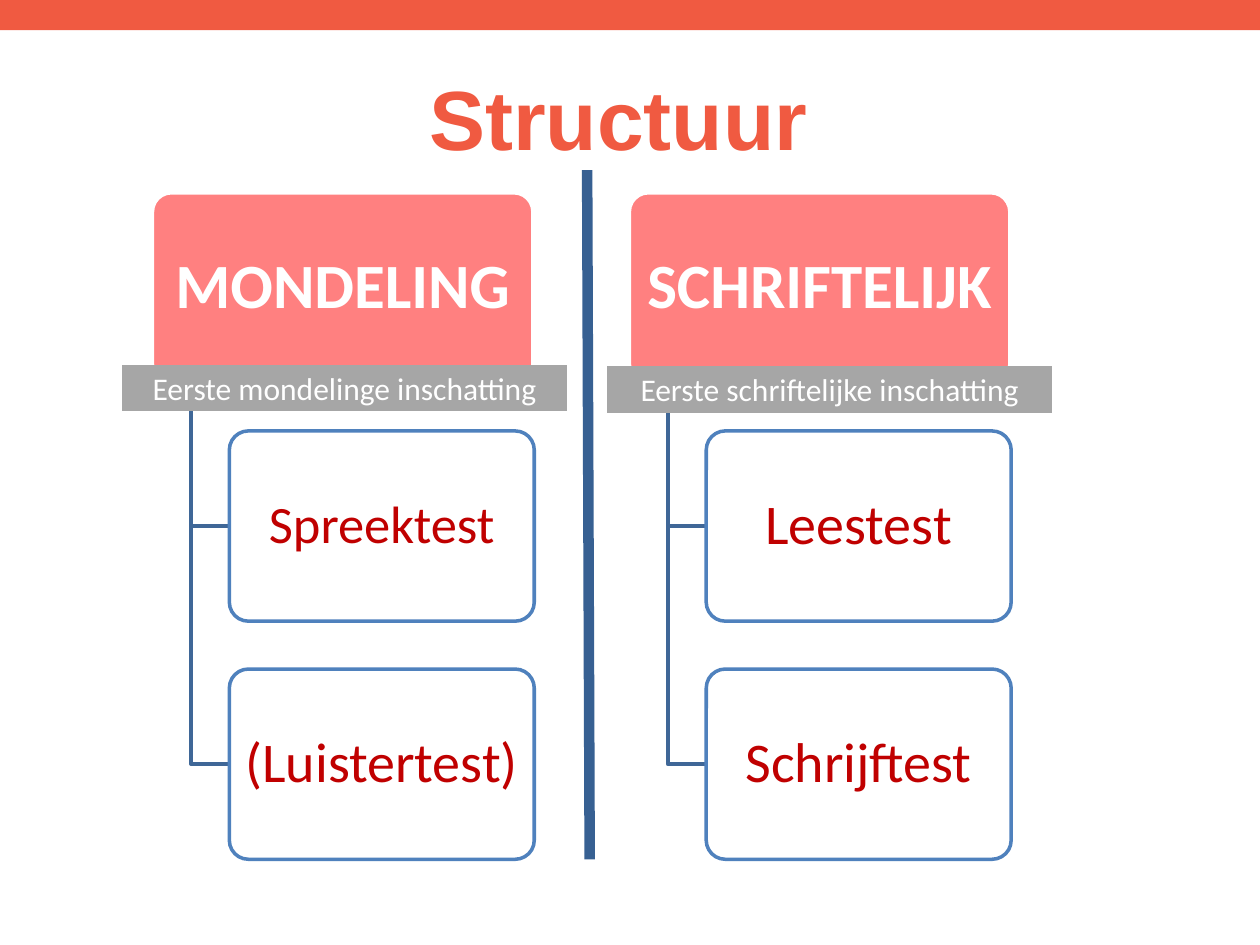
from lxml.etree import SubElement
from pptx import Presentation
from pptx.dml.color import RGBColor
from pptx.enum.shapes import MSO_CONNECTOR, MSO_SHAPE
from pptx.enum.text import MSO_ANCHOR, PP_ALIGN
from pptx.oxml.ns import qn
from pptx.util import Inches, Pt

ORANGE, PINK, RED, WHITE = "F05A41", "FF8080", "C00000", "FFFFFF"
GREY, BLUE, ELBOW_BLUE, DIVIDER_BLUE = "A6A6A6", "4F81BD", "3F6797", "376092"


def paint(shape, fill=None, line=None, width=2):
    """Set fill and outline from hex strings; None means no colour."""
    shape.shadow.inherit = False
    if fill:
        shape.fill.solid()
        shape.fill.fore_color.rgb = RGBColor.from_string(fill)
    else:
        shape.fill.background()
    if line:
        shape.line.color.rgb = RGBColor.from_string(line)
        shape.line.width = Pt(width)
    else:
        shape.line.fill.background()


def write(shape, text, size, color, font="Calibri", bold=False, spacing=1.0,
          inset_x=0.1, inset_y=0.05):
    """Put one centred paragraph in a shape."""
    frame = shape.text_frame
    frame.word_wrap = True
    frame.vertical_anchor = MSO_ANCHOR.MIDDLE
    frame.margin_left = frame.margin_right = Inches(inset_x)
    frame.margin_top = frame.margin_bottom = Inches(inset_y)
    paragraph = frame.paragraphs[0]
    paragraph.alignment = PP_ALIGN.CENTER
    paragraph.line_spacing = spacing
    run = paragraph.add_run()
    run.text = text
    run.font.name, run.font.size, run.font.bold = font, Pt(size), bold
    run.font.color.rgb = RGBColor.from_string(color)


presentation = Presentation()
presentation.slide_width, presentation.slide_height = Inches(10), Inches(7.5)
slide = presentation.slides.add_slide(presentation.slide_layouts[5])
shapes = slide.shapes

# Top band and title
band = shapes.add_shape(MSO_SHAPE.RECTANGLE, 0, 0, presentation.slide_width, Inches(0.24))
paint(band, ORANGE)
title = shapes.title
title.left, title.top, title.width, title.height = map(Inches, (0.5, 0.3, 9, 1.25))
write(title, "Structuur ", 48, ORANGE, font="Arial", bold=True)

# Grid of the two columns: a heading row and two test rows
LEFT, TOP = 1.21, 1.53
COLUMN_STEP, ROW_STEP = 3.785, 1.89
HEADING_WIDTH, CARD_WIDTH, CARD_HEIGHT = 3.02, 2.42, 1.51
INDENT = 0.61
columns = [
    ("MONDELING", [("Spreektest", 30), ("(Luistertest)", 32)]),
    ("SCHRIFTELIJK", [("Leestest", 32), ("Schrijftest", 32)]),
]

for column, (heading, tests) in enumerate(columns):
    left = LEFT + column * COLUMN_STEP
    cards = [(heading, 36, left, TOP, HEADING_WIDTH, PINK, WHITE, WHITE)]
    for row, (test, size) in enumerate(tests, start=1):
        top = TOP + row * ROW_STEP
        cards.append((test, size, left + INDENT, top, CARD_WIDTH, WHITE, BLUE, RED))

        # Elbow from the heading to the middle of the test card
        trunk, middle = left + INDENT / 2, top + CARD_HEIGHT / 2
        builder = shapes.build_freeform(
            Inches(trunk), Inches(TOP + CARD_HEIGHT), scale=1.0)
        builder.add_line_segments(
            [(Inches(trunk), Inches(middle)), (Inches(left + INDENT), Inches(middle))],
            close=False)
        paint(builder.convert_to_shape(), line=ELBOW_BLUE)

    for text, size, x, y, width, fill, line, color in cards:
        card = shapes.add_shape(
            MSO_SHAPE.ROUNDED_RECTANGLE, *map(Inches, (x, y, width, CARD_HEIGHT)))
        card.adjustments[0] = 0.1
        paint(card, fill, line)
        write(card, text, size, color, bold=text == heading, spacing=0.9, inset_x=0.06)

# Divider between the columns
divider = shapes.add_connector(
    MSO_CONNECTOR.STRAIGHT, *map(Inches, (4.66, 1.35, 4.68, 6.82)))
divider.line.color.rgb = RGBColor.from_string(DIVIDER_BLUE)
divider.line.width = Pt(6)
SubElement(divider._element.spPr, qn("a:effectLst"))

# Grey bars under the headings
bars = [("Eerste mondelinge inschatting", 0.33, 2.29),
        ("Eerste schriftelijke inschatting", 4.18, 2.3)]
for text, left, top in bars:
    bar = shapes.add_shape(MSO_SHAPE.MATH_MINUS, *map(Inches, (left, top, 4.81, 1.58)))
    paint(bar, GREY)
    write(bar, text, 18, WHITE)

presentation.save("out.pptx")
